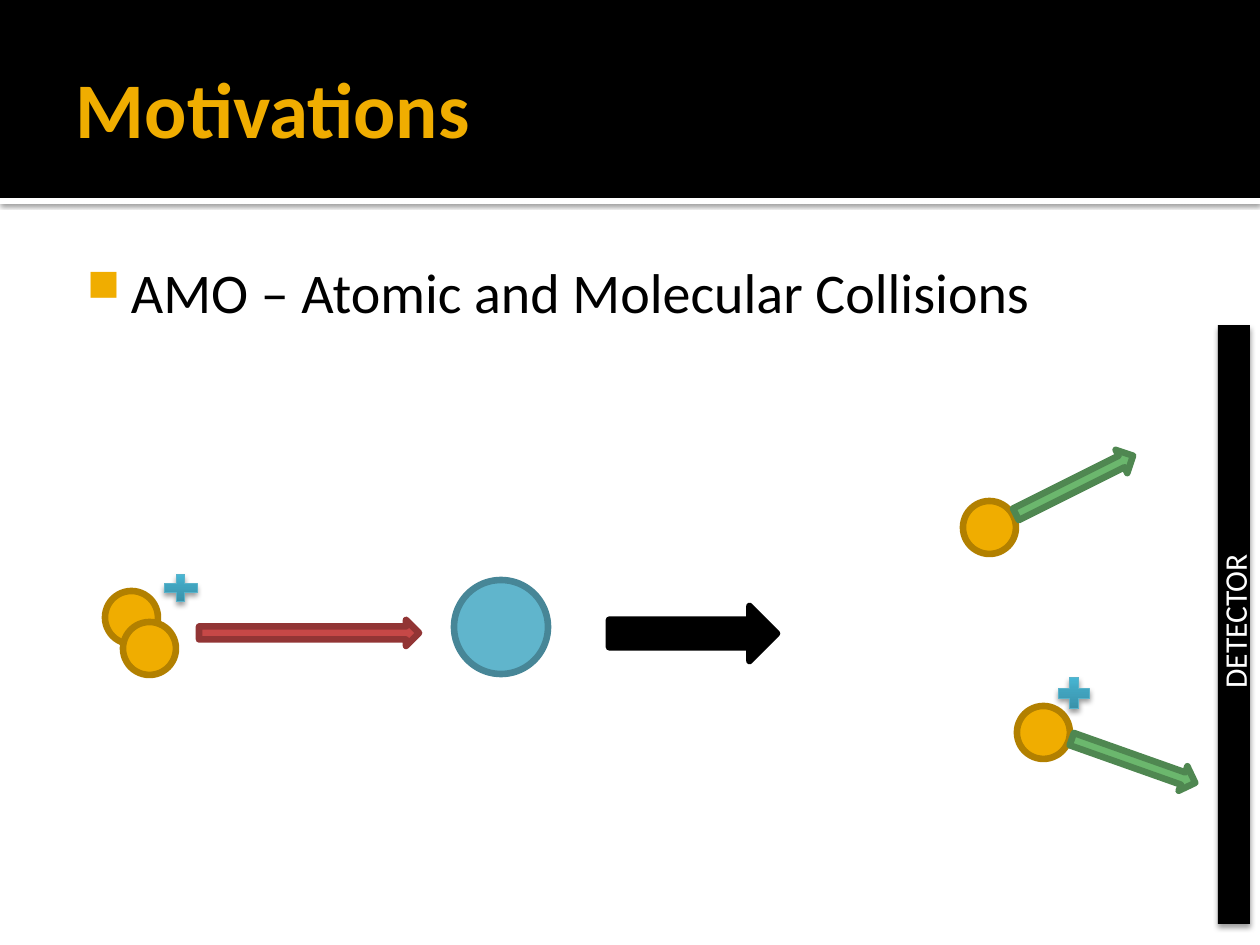
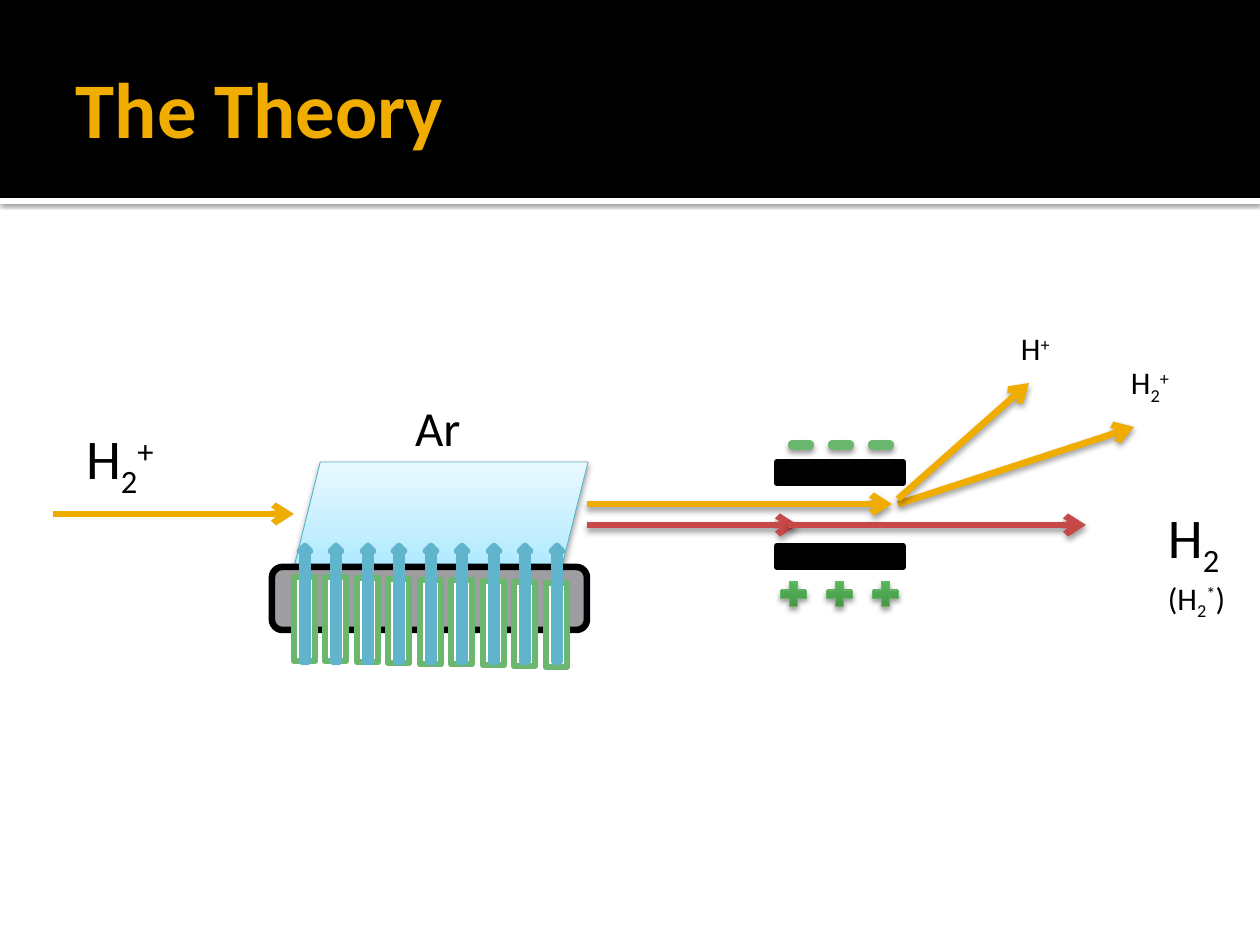
import pptx
import pptx.util
from pptx.dml.color import RGBColor
from pptx.enum.shapes import MSO_CONNECTOR, MSO_SHAPE
from pptx.enum.text import MSO_ANCHOR, MSO_AUTO_SIZE
from pptx.oxml import parse_xml
from pptx.oxml.ns import nsdecls, qn
from lxml import etree

# Shared look
FONT = "Calibri"
BLACK, WHITE, GOLD, GOLD_EDGE = "000000", "FFFFFF", "F0AD00", "B28000"
RED, RED_EDGE, BLUE, BLUE_EDGE = "C64847", "923535", "60B5CC", "478697"
GREEN, GREEN_EDGE, GREY, SKY = "6BB76D", "4F8751", "9D9DA2", "5BB3CA"
BLUE_GRAD = [(0, "378BA2"), (55, "41A4BF"), (100, "4BBFDE")]
GREEN_GRAD = [(0, "438F45"), (55, "4FA851"), (100, "5CC35F")]
GAS_GRAD = [(0, "ADE9FF"), (35, "C5EFFF"), (100, "E9F9FF")]
THICK, THIN = 3.78, 0.5
# Shadows: opacity %, blur pt, distance pt
BAND_SHADOW, SOFT, DEEP = (60, 2.5, 0.8), (38, 3.1, 2), (38, 3.5, 2)
SLIDE_W, SLIDE_H, BAND_H = 1260, 945, 198

# Slide 1: the collision
TOPIC = "AMO – Atomic and Molecular Collisions"
ATOM_SIZE = 53
ATOMS = [(105, 591), (123, 622), (963, 501), (1017, 706)]
TARGET = (454, 580, 94, 94)
MOTION_ARROWS = [  # box, fill, edge, rotation
    ((199, 620, 220, 26), RED, RED_EDGE, 0),
    ((1009, 472, 131, 26), GREEN, GREEN_EDGE, 333.4),
    ((1068, 748, 131, 26), GREEN, GREEN_EDGE, 19.5),
    ((609, 606, 168, 55), BLACK, BLACK, 0),
]
CHARGES = [(158, 570, 45, 36), (1053, 672, 42, 42)]
DETECTOR = (1218, 325, 32, 599)

# Slide 2: beam line; text runs are (text, baseline %)
H2_ION = [("H", 0), ("2", -25), ("+", 30)]
LABELS = [  # box, paragraphs of (size, runs)
    ((73, 418, 105, 81), [(32, H2_ION)]),
    ((402, 391, 92, 72), [(28, [("Ar", 0)])]),
    ((1008, 323, 156, 50), [(18, [("H", 0), ("+", 30)])]),
    ((1118, 357, 204, 50), [(18, H2_ION)]),
    ((1155, 496, 105, 118), [
        (32, [("H", 0), ("2", -25)]),
        (18, [("(H", 0), ("2", -25), ("*", 30), (")", 0)])]),
]
ION_BEAM = (53, 514, 294, 514)
BEAMS = [  # ends, colour
    ((587, 525, 798, 525), RED),
    ((788, 525, 1086, 525), RED),
    ((587, 504, 892, 504), GOLD),
]
DEFLECTED = [((898, 504, 1134, 427), GOLD), ((898, 499, 1029, 383), GOLD)]
GAS_CELL = (294, 462, 294, 105)
GAS_BASE = (272, 567, 315, 63)
PLATE_TOPS = (546, 462)
CHARGE_COUNT, TUBE_COUNT = 3, 9


def px(n):
    return round(n * 914400 / 126)


def rgb(color):
    return RGBColor.from_string(color)


def set_line(line, color, width):
    line.color.rgb = rgb(color)
    line.width = pptx.util.Pt(width)


def add_shadow(effects, shadow):
    alpha, blur, dist = shadow
    effects.append(parse_xml(
        f'<a:outerShdw {nsdecls("a")} blurRad="{round(blur * 12700)}" '
        f'dist="{round(dist * 12700)}" dir="5400000" rotWithShape="0">'
        f'<a:srgbClr val="{BLACK}"><a:alpha val="{alpha * 1000}"/></a:srgbClr>'
        '</a:outerShdw>'))


def set_gradient(sp, stops):
    sp.fill.gradient()
    stop_xml = "".join(f'<a:gs pos="{pos * 1000}"><a:srgbClr val="{color}"/></a:gs>'
                       for pos, color in stops)
    props = sp.element.spPr
    props.replace(props.find(qn("a:gradFill")), parse_xml(
        f'<a:gradFill {nsdecls("a")} rotWithShape="1"><a:gsLst>{stop_xml}</a:gsLst>'
        '<a:lin ang="16200000" scaled="0"/></a:gradFill>'))


def add_shape(slide, kind, box, fill, edge=None, width=THICK, rotation=0, shadow=None):
    sp = slide.shapes.add_shape(kind, *map(px, box))
    sp.rotation = rotation
    if isinstance(fill, list):
        set_gradient(sp, fill)
    else:
        sp.fill.solid()
        sp.fill.fore_color.rgb = rgb(fill)
    if edge:
        set_line(sp.line, edge, width)
    else:
        sp.line.fill.background()
    sp.shadow.inherit = False
    if shadow:
        add_shadow(sp.element.spPr.find(qn("a:effectLst")), shadow)
    return sp


def add_arrow(slide, ends, color, shadow=None):
    line = slide.shapes.add_connector(MSO_CONNECTOR.STRAIGHT, *map(px, ends))
    set_line(line.line, color, THICK)
    props = line.element.spPr
    etree.SubElement(props.find(qn("a:ln")), qn("a:tailEnd"), type="arrow")
    effects = etree.SubElement(props, qn("a:effectLst"))
    if shadow:
        add_shadow(effects, shadow)


def add_text(slide, box, paragraphs, color=BLACK, bold=False, rotation=0,
             anchor=MSO_ANCHOR.TOP, insets=(13, 6, 13, 6), grow=True):
    sp = slide.shapes.add_textbox(*map(px, box))
    sp.rotation = rotation
    tf = sp.text_frame
    tf.word_wrap = True
    tf.auto_size = MSO_AUTO_SIZE.SHAPE_TO_FIT_TEXT if grow else MSO_AUTO_SIZE.NONE
    tf.vertical_anchor = anchor
    tf.margin_left, tf.margin_top, tf.margin_right, tf.margin_bottom = map(px, insets)
    for i, (size, runs) in enumerate(paragraphs):
        p = tf.add_paragraph() if i else tf.paragraphs[0]
        for text, baseline in runs:
            r = p.add_run()
            r.text = text
            r.font.name, r.font.bold = FONT, bold
            r.font.size = pptx.util.Pt(size)
            r.font.color.rgb = rgb(color)
            if baseline:
                r.font._element.set("baseline", str(baseline * 1000))
    return sp


def add_bullet(p):
    props = p._p.get_or_add_pPr()
    props.set("marL", str(px(60)))
    props.set("indent", str(px(-44)))
    color = etree.SubElement(props, qn("a:buClr"))
    etree.SubElement(color, qn("a:srgbClr"), val=GOLD)
    etree.SubElement(props, qn("a:buSzPct"), val="80000")
    etree.SubElement(props, qn("a:buChar"), char="■")


def add_slide(prs, title):
    slide = prs.slides.add_slide(prs.slide_layouts[6])
    slide.background.fill.solid()
    slide.background.fill.fore_color.rgb = rgb(WHITE)
    add_shape(slide, MSO_SHAPE.RECTANGLE, (0, BAND_H, SLIDE_W, 6), WHITE, shadow=BAND_SHADOW)
    add_shape(slide, MSO_SHAPE.RECTANGLE, (0, 0, SLIDE_W, BAND_H), BLACK)
    add_text(slide, (63, 21, 1134, 173), [(45, [(title, 0)])], color=GOLD, bold=True,
             anchor=MSO_ANCHOR.MIDDLE, insets=(13, 6, 6, 6), grow=False)
    return slide


def build_motivations(prs):
    slide = add_slide(prs, "Motivations")
    topic = add_text(slide, (63, 244, 1134, 155), [(32, [(TOPIC, 0)])],
                     insets=(8, 13, 13, 6), grow=False)
    add_bullet(topic.text_frame.paragraphs[0])

    # Molecule, target and fragments
    for x, y in ATOMS:
        add_shape(slide, MSO_SHAPE.OVAL, (x, y, ATOM_SIZE, ATOM_SIZE), GOLD, GOLD_EDGE)
    add_shape(slide, MSO_SHAPE.OVAL, TARGET, BLUE, BLUE_EDGE)
    for box, fill, edge, rotation in MOTION_ARROWS:
        add_shape(slide, MSO_SHAPE.RIGHT_ARROW, box, fill, edge, rotation=rotation)
    for box in CHARGES:
        add_shape(slide, MSO_SHAPE.MATH_PLUS, box, BLUE_GRAD, SKY, THIN, shadow=SOFT)

    # Detector
    add_shape(slide, MSO_SHAPE.RECTANGLE, DETECTOR, BLACK, shadow=SOFT)
    add_text(slide, (1135, 577, 199, 50), [(18, [("DETECTOR", 0)])],
             color=WHITE, rotation=270)


def build_theory(prs):
    slide = add_slide(prs, "The Theory")

    # Incoming ions and gas cell
    add_arrow(slide, ION_BEAM, GOLD)
    add_shape(slide, MSO_SHAPE.PARALLELOGRAM, GAS_CELL, GAS_GRAD, SKY, THIN, shadow=DEEP)
    add_shape(slide, MSO_SHAPE.ROUNDED_RECTANGLE, GAS_BASE, GREY, BLACK)

    # Beams between the charged plates
    for top in PLATE_TOPS:
        add_shape(slide, MSO_SHAPE.RECTANGLE, (777, top, 126, 21), BLACK, BLACK)
    for ends, color in BEAMS:
        add_arrow(slide, ends, color, DEEP)
    for box, paragraphs in LABELS:
        add_text(slide, box, paragraphs)
    for i in range(CHARGE_COUNT):
        add_shape(slide, MSO_SHAPE.MATH_PLUS, (776 + 46 * i, 577, 35, 34),
                  GREEN_GRAD, "67B569", THIN, shadow=SOFT)
        add_shape(slide, MSO_SHAPE.MATH_MINUS, (789 + 40 * i, 441, 24, 8),
                  GREEN_GRAD, GREEN, 4.5, shadow=SOFT)
    for ends, color in DEFLECTED:
        add_arrow(slide, ends, color, DEEP)

    # Gas tubes, each a little lower than the last, with the flow inside
    for i in range(TUBE_COUNT):
        shift = 63 * i // 2
        add_shape(slide, MSO_SHAPE.RECTANGLE, (294 + shift, 577 + 3 * i // 4, 21, 84),
                  WHITE, GREEN)
        add_shape(slide, MSO_SHAPE.UP_ARROW, (300 + shift, 546, 10, 116), WHITE, BLUE)


def main():
    prs = pptx.Presentation()
    prs.slide_width, prs.slide_height = px(SLIDE_W), px(SLIDE_H)
    build_motivations(prs)
    build_theory(prs)
    prs.save("out.pptx")


if __name__ == "__main__":
    main()
